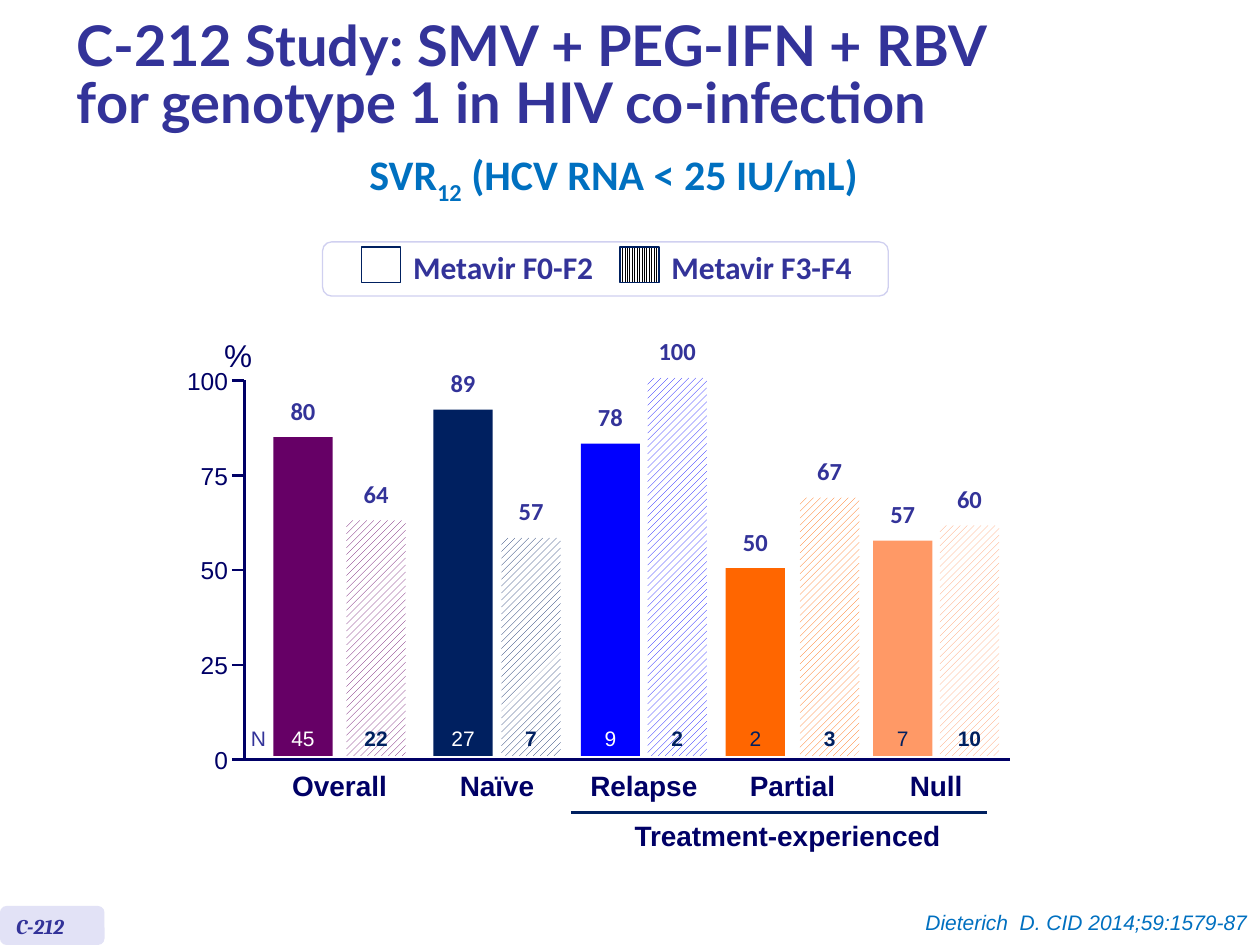
import pptx
import pptx.dml.color
import pptx.enum.dml
import pptx.enum.shapes
import pptx.enum.text
import pptx.util
from lxml import etree
from pptx.oxml.ns import qn

Inches = pptx.util.Inches
Pt = pptx.util.Pt
RGBColor = pptx.dml.color.RGBColor
ALIGN = pptx.enum.text.PP_ALIGN
ANCHOR = pptx.enum.text.MSO_ANCHOR
SHAPE = pptx.enum.shapes.MSO_SHAPE
PATTERN = pptx.enum.dml.MSO_PATTERN

WHITE = RGBColor(0xFF, 0xFF, 0xFF)
BLACK = RGBColor(0x00, 0x00, 0x00)
INDIGO = RGBColor(0x33, 0x33, 0x99)
SKY = RGBColor(0x00, 0x70, 0xC0)
NAVY = RGBColor(0x00, 0x20, 0x60)
AXIS = RGBColor(0x00, 0x00, 0x66)
LAVENDER = RGBColor(0xE2, 0xE2, 0xF6)
LILAC = RGBColor(0xD0, 0xD0, 0xF0)
PURPLE = RGBColor(0x66, 0x00, 0x66)
BLUE = RGBColor(0x00, 0x00, 0xFF)
ORANGE = RGBColor(0xFF, 0x66, 0x00)
SALMON = RGBColor(0xFF, 0x99, 0x66)

BAR_WIDTH = 0.47
# name, colour, colour of N, then (offset, height, percentage, N) for each bar
GROUPS = [
    ("Overall", PURPLE, WHITE, [(0.23, 2.53, 80, 45), (0.81, 1.87, 64, 22)]),
    ("Naïve", NAVY, WHITE, [(1.5, 2.75, 89, 27), (2.04, 1.73, 57, 7)]),
    ("Relapse", BLUE, WHITE, [(2.67, 2.48, 78, 9), (3.2, 3, 100, 2)]),
    ("Partial", ORANGE, NAVY, [(3.82, 1.49, 50, 2), (4.41, 2.05, 67, 3)]),
    ("Null", SALMON, NAVY, [(4.99, 1.71, 57, 7), (5.52, 1.83, 60, 10)]),
]


def format_font(font, name, size, color, bold=False, italic=False):
    font.name, font.size = name, Pt(size)
    font.bold, font.italic = bold, italic
    font.color.rgb = color


def add_text(slide, text, box, name, size, color, bold=False, italic=False,
             align=ALIGN.CENTER, anchor=ANCHOR.TOP, insets=(0.1, 0.05)):
    frame = slide.shapes.add_textbox(*map(Inches, box)).text_frame
    frame.word_wrap = False
    frame.vertical_anchor = anchor
    frame.margin_left = frame.margin_right = Inches(insets[0])
    frame.margin_top = frame.margin_bottom = Inches(insets[1])
    paragraph = frame.paragraphs[0]
    paragraph.text = text
    paragraph.alignment = align
    format_font(paragraph.font, name, size, color, bold, italic)
    return paragraph


def add_box(slide, kind, box, color=None, line=None, pattern=None):
    shape = slide.shapes.add_shape(kind, *map(Inches, box))
    shape.shadow.inherit = False
    if pattern:
        shape.fill.patterned()
        shape.fill.pattern = pattern
        shape.fill.fore_color.rgb = color
        shape.fill.back_color.rgb = WHITE
    elif color is not None:
        shape.fill.solid()
        shape.fill.fore_color.rgb = color
    else:
        shape.fill.background()
    if line is None:
        shape.line.fill.background()
    else:
        shape.line.color.rgb = line
        shape.line.width = Pt(0.75)


def add_line(slide, start, end, color=AXIS):
    connector = slide.shapes.add_connector(
        pptx.enum.shapes.MSO_CONNECTOR.STRAIGHT, *map(Inches, start + end))
    connector.line.color.rgb = color
    connector.line.width = Pt(1.5)
    etree.SubElement(connector._element.spPr, qn("a:effectLst"))


def add_title(slide, box):
    title = slide.shapes.title
    title.left, title.top, title.width, title.height = map(Inches, box)
    frame = title.text_frame
    frame.auto_size = pptx.enum.text.MSO_AUTO_SIZE.NONE
    frame.vertical_anchor = ANCHOR.MIDDLE
    paragraph = frame.paragraphs[0]
    paragraph.text = "C-212 Study: SMV + PEG-IFN + RBV \vfor genotype 1 in HIV co-infection"
    paragraph.alignment = ALIGN.LEFT
    paragraph.line_spacing = 0.85
    format_font(paragraph.font, "Lato", 32, INDIGO, bold=True)


def add_heading(slide, box):
    paragraph = add_text(slide, "SVR", box, "Calibri", 24, SKY, bold=True)
    paragraph.line_spacing = Pt(23.6)
    subscript = paragraph.add_run()
    subscript.text = "12"
    subscript.font._element.set("baseline", "-25000")
    paragraph.add_run().text = " (HCV RNA < 25 IU/mL)"


def add_legend(slide, box):
    left, top, width, height = box
    add_box(slide, SHAPE.ROUNDED_RECTANGLE, box, WHITE, LILAC)
    entries = [("Metavir F0-F2", None, None),
               ("Metavir F3-F4", BLACK, PATTERN.LIGHT_VERTICAL)]
    for index, (name, color, pattern) in enumerate(entries):
        key_left = left + 0.31 + 2.05 * index
        add_box(slide, SHAPE.RECTANGLE, (key_left, top + 0.04, 0.31, 0.28), color, NAVY, pattern)
        add_text(slide, name, (key_left + 0.31, top, 1.65, 0.4),
                 "Calibri", 18, INDIGO, bold=True, align=ALIGN.LEFT)


def add_axes(slide, box):
    left, top, width, height = box
    bottom = top + height
    add_line(slide, (left, top), (left, bottom))
    add_line(slide, (left - 0.1, bottom), (left + width, bottom))
    for value in range(0, 101, 25):
        y = bottom - height * value / 100
        if value:
            add_line(slide, (left - 0.1, y), (left, y))
        add_text(slide, str(value), (left - 0.46, y - 0.12, 0.33, 0.24), "Arial", 14, AXIS,
                 align=ALIGN.RIGHT, anchor=ANCHOR.MIDDLE, insets=(0, 0))
    add_text(slide, "%", (left - 0.26, top - 0.4, 0.42, 0.4), "Arial", 18, AXIS)


def add_bars(slide, box):
    left, top, width, height = box
    bottom = top + height
    baseline = bottom - 0.03
    add_text(slide, "N", (left - 0.05, bottom - 0.32, 0.32, 0.3), "Arial", 12, INDIGO)
    for name, color, count_color, bars in GROUPS:
        for index, (offset, bar_height, percentage, count) in enumerate(bars):
            bar_left, bar_top = left + offset, baseline - bar_height
            pattern = PATTERN.WIDE_UPWARD_DIAGONAL if index else None
            add_box(slide, SHAPE.RECTANGLE, (bar_left, bar_top, BAR_WIDTH, bar_height),
                    color, pattern=pattern)
            add_text(slide, str(percentage), (bar_left, bar_top - 0.43, BAR_WIDTH, 0.44),
                     "Calibri", 14, INDIGO, bold=True, insets=(0, 0.1))
            add_text(slide, str(count), (bar_left, bottom - 0.32, BAR_WIDTH, 0.3),
                     "Arial", 12, NAVY if index else count_color, bold=bool(index))
        center = left + (bars[0][0] + bars[1][0] + BAR_WIDTH) / 2
        add_text(slide, name, (center - 0.53, bottom + 0.02, 1.06, 0.37),
                 "Arial", 16, AXIS, bold=True)


def add_chart_region(slide, box):
    left, top, width, height = box
    add_bars(slide, box)
    add_axes(slide, box)
    bracket_top = top + height + 0.42
    add_line(slide, (left + 2.59, bracket_top), (left + 5.89, bracket_top), NAVY)
    add_text(slide, "Treatment-experienced", (left + 2.98, bracket_top, 2.66, 0.37),
             "Arial", 16, AXIS, bold=True)


def add_study_tag(slide, box):
    left, top, width, height = box
    add_box(slide, SHAPE.ROUNDED_RECTANGLE, box, LAVENDER)
    add_text(slide, "C-212", (left + 0.03, top + 0.01, 0.79, 0.3), "Cambria", 12, INDIGO,
             bold=True, italic=True, align=ALIGN.LEFT)


def add_citation(slide, box):
    add_text(slide, "Dieterich  D. CID 2014;59:1579-87", box, "Arial", 12, SKY,
             italic=True, align=ALIGN.RIGHT, insets=(0.1, 0.05))


def main():
    presentation = pptx.Presentation()
    presentation.slide_width, presentation.slide_height = Inches(10), Inches(7.5)
    slide = presentation.slides.add_slide(presentation.slide_layouts[5])
    add_title(slide, (0.51, 0.08, 9.13, 1.07))
    add_heading(slide, (2.8, 1.26, 4.14, 0.44))
    add_legend(slide, (2.56, 1.92, 4.49, 0.43))
    add_chart_region(slide, (1.94, 3.02, 6.08, 3.01))
    add_study_tag(slide, (0, 7.19, 0.83, 0.31))
    add_citation(slide, (6.81, 7.17, 3.19, 0.3))
    presentation.save("out.pptx")


if __name__ == "__main__":
    main()
